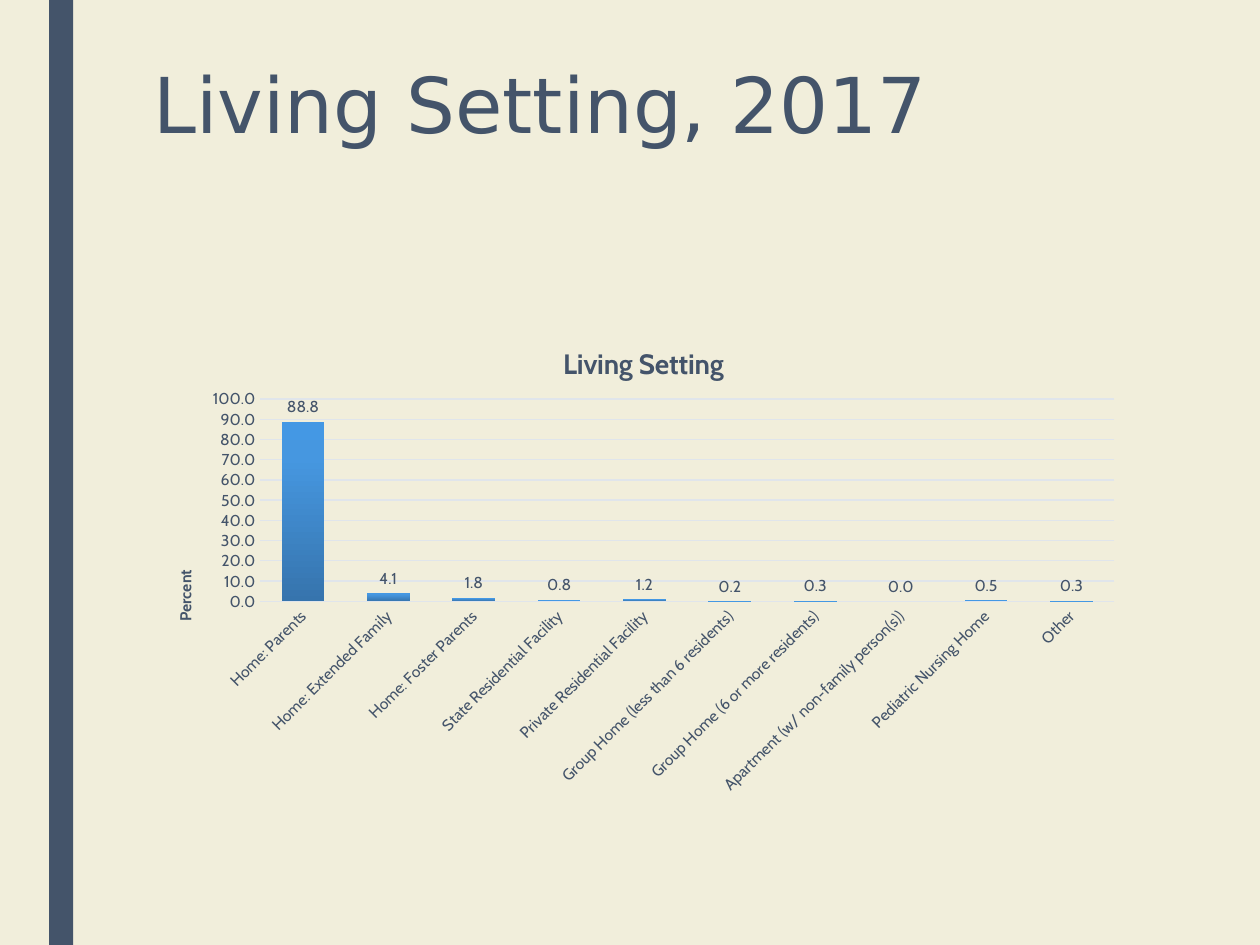
from copy import deepcopy

from lxml import etree
from pptx import Presentation
from pptx import util as u
from pptx.chart.data import CategoryChartData
from pptx.dml.color import RGBColor
from pptx.enum import chart as ch, shapes, text
from pptx.oxml.ns import qn

CREAM = RGBColor(0xF1, 0xEE, 0xDB)
SLATE = RGBColor(0x44, 0x54, 0x6A)
PALE = RGBColor(0xE0, 0xE5, 0xEB)
BLUES = [(0, RGBColor(0x36, 0x74, 0xAD)),
         (0.8, RGBColor(0x46, 0x97, 0xE0)),
         (1, RGBColor(0x44, 0x98, 0xE4))]

SETTINGS = {
    "Home: Parents": 88.8,
    "Home: Extended Family": 4.1,
    "Home: Foster Parents": 1.8,
    "State Residential Facility": 0.8,
    "Private Residential Facility": 1.2,
    "Group Home (less than 6 residents)": 0.2,
    "Group Home (6 or more residents)": 0.3,
    "Apartment (w/ non-family person(s))": 0.0,
    "Pediatric Nursing Home": 0.5,
    "Other": 0.3,
}
FORMAT = "###0.0"


class Page:
    """Style and current slide."""
    head = "DejaVu Sans"
    body = "Cabin"

    def __init__(self, slide):
        self.slide = slide
        fill = slide.background.fill
        fill.solid()
        fill.fore_color.rgb = CREAM

    def style(self, font, size, name=None, bold=False):
        font.name, font.size, font.bold = name or self.body, u.Pt(size), bold
        font.color.rgb = SLATE

    def bar(self, *box):
        bar = self.slide.shapes.add_shape(
            shapes.MSO_SHAPE.RECTANGLE, *map(u.Inches, box))
        bar.shadow.inherit = False
        bar.fill.solid()
        bar.fill.fore_color.rgb = SLATE
        bar.line.fill.background()

    def title(self, words, *box):
        frame = self.slide.shapes.add_textbox(*map(u.Inches, box)).text_frame
        frame.word_wrap = True
        frame.vertical_anchor = text.MSO_ANCHOR.TOP
        frame.text = words
        line = frame.paragraphs[0]
        line.line_spacing = 0.89
        self.style(line.runs[0].font, 44, self.head)

    def place(self, parent, **spots):
        """Set a manual layout, in fractions of the chart area."""
        layout = parent.find(qn("c:layout"))
        if layout is None:
            layout = etree.Element(qn("c:layout"))
            tx = parent.find(qn("c:tx"))
            parent.insert(0 if tx is None else parent.index(tx) + 1, layout)
        for child in list(layout):
            layout.remove(child)
        manual = etree.SubElement(layout, qn("c:manualLayout"))
        if "w" in spots:
            etree.SubElement(manual, qn("c:layoutTarget")).set("val", "inner")
        for key in "xy":
            etree.SubElement(manual, qn(f"c:{key}Mode")).set("val", "edge")
        for key, spot in spots.items():
            etree.SubElement(manual, qn(f"c:{key}")).set("val", str(spot))

    def label(self, owner, words, size, **spots):
        """Title a chart or an axis."""
        title = owner.chart_title if hasattr(owner, "chart_title") else owner.axis_title
        title.text_frame.text = words
        self.style(title.text_frame.paragraphs[0].runs[0].font, size, bold=True)
        self.place(title._element, **spots)

    def axis(self, axis):
        axis.major_tick_mark = axis.minor_tick_mark = ch.XL_TICK_MARK.NONE
        self.style(axis.tick_labels.font, 9)

    def rule(self, line):
        line.color.rgb = PALE
        line.width = u.Pt(0.75)

    def shade(self, fill, series):
        fill.gradient()
        fill.gradient_angle = 90
        stops = series._element.find(".//" + qn("a:gsLst"))
        stops.append(deepcopy(stops[-1]))
        for stop, (spot, color) in zip(fill.gradient_stops, BLUES):
            stop.position = spot
            stop.color.rgb = color

    def chart(self, name, values, *box):
        data = CategoryChartData(number_format=FORMAT)
        data.categories = list(values)
        data.add_series("Series 1", list(values.values()))
        chart = self.slide.shapes.add_chart(
            ch.XL_CHART_TYPE.COLUMN_CLUSTERED, *map(u.Inches, box), data).chart
        self.style(chart.font, 10)
        chart.has_legend = False
        self.label(chart, name, 16, x=0.42, y=0.05)

        # Axes
        cats, vals = chart.category_axis, chart.value_axis
        self.axis(cats)
        self.rule(cats.format.line)
        cats._element.find(f"{qn('c:txPr')}/{qn('a:bodyPr')}").set("rot", "-2700000")
        self.axis(vals)
        vals.minimum_scale, vals.maximum_scale, vals.major_unit = 0, 100, 10
        vals.tick_labels.number_format = FORMAT
        vals.tick_labels.number_format_is_linked = False
        vals.format.line.fill.background()
        self.rule(vals.major_gridlines.format.line)
        self.label(vals, "Percent", 9, x=0.03, y=0.51)
        turn = vals.axis_title._element.find(".//" + qn("a:bodyPr"))
        turn.set("rot", "-5400000")
        turn.set("vert", "horz")

        # Columns and their values
        plot = chart.plots[0]
        plot.gap_width, plot.overlap = 100, -24
        plot.vary_by_categories = False
        series = plot.series[0]
        self.shade(series.format.fill, series)
        marks = series.data_labels
        marks.show_value = True
        marks.position = ch.XL_LABEL_POSITION.OUTSIDE_END
        marks.number_format, marks.number_format_is_linked = FORMAT, False
        self.style(marks.font, 9)
        area = chart._chartSpace.find(".//" + qn("c:plotArea"))
        self.place(area, x=0.12, y=0.17, w=0.86, h=0.41)


def main():
    deck = Presentation()
    deck.slide_width, deck.slide_height = u.Inches(10), u.Inches(7.5)
    page = Page(deck.slides.add_slide(deck.slide_layouts[6]))

    # Side bar, heading and chart
    page.bar(0.39, 0, 0.19, 7.5)
    page.title("Living Setting, 2017", 1.12, 0.49, 7.88, 1.62)
    page.chart("Living Setting", SETTINGS, 1.12, 2.5, 7.88, 3.92)

    deck.save("out.pptx")


if __name__ == "__main__":
    main()
